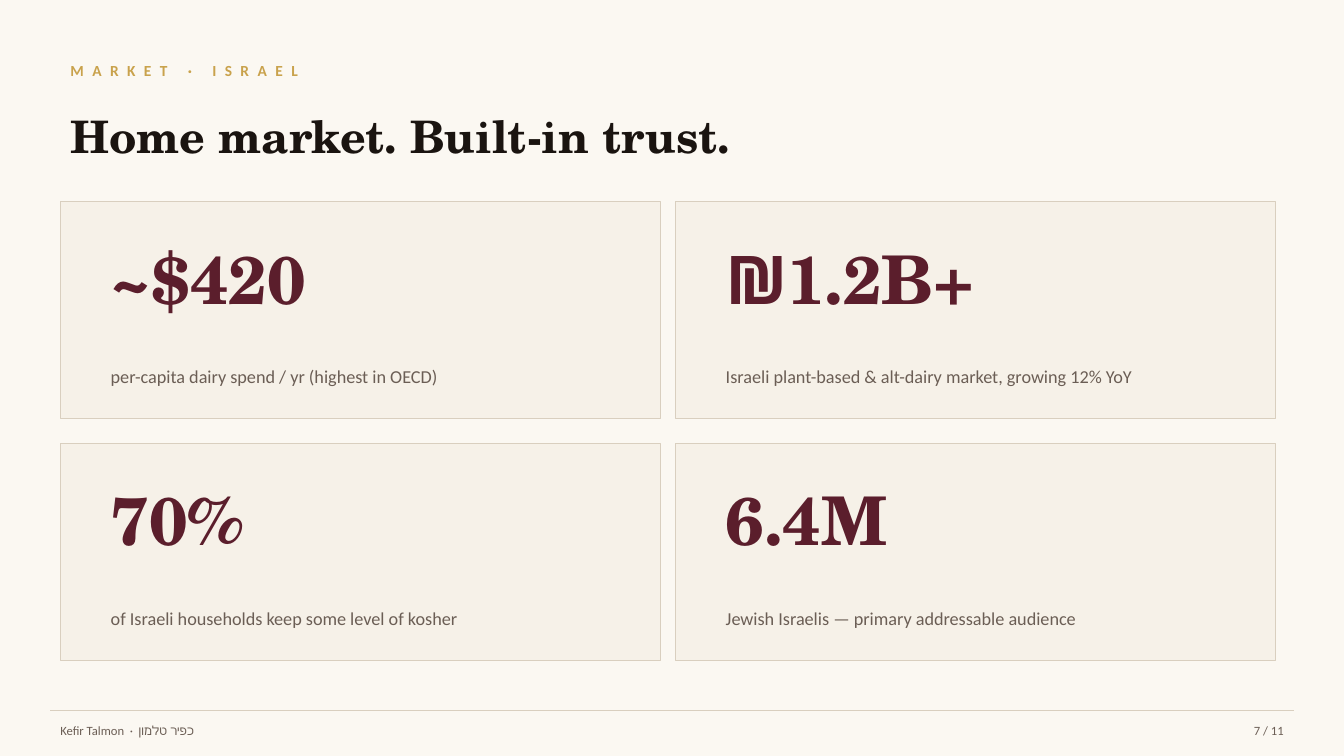
from pptx import Presentation
from pptx import util as u
from pptx.dml.color import RGBColor
from pptx.enum import shapes, text
from pptx.oxml.xmlchemy import OxmlElement

EYEBROW = "MARKET · ISRAEL"
HEADLINE = "Home market. Built-in trust."
STATS = [
    ("~$420", "per-capita dairy spend / yr (highest in OECD)"),
    ("₪1.2B+", "Israeli plant-based & alt-dairy market, growing 12% YoY"),
    ("70%", "of Israeli households keep some level of kosher"),
    ("6.4M", "Jewish Israelis — primary addressable audience"),
]
FOOTER = "Kefir Talmon  ·  כפיר טלמון"
PAGE_NUMBER = "7 / 11"

COLORS = {
    "background": "FBF8F2",
    "card": "F6F1E8",
    "rule": "D9CFBF",
    "gold": "C9A24C",
    "ink": "1A1410",
    "wine": "5B1E2C",
    "muted": "6B5E55",
}
SERIF, SANS = "TeX Gyre Schola", "Calibri"

WIDTH, HEIGHT = 13.33, 7.5
MARGIN, EDGE = 0.6, 0.5
COLUMNS = 2
GRID_TOP = 2
CARD_WIDTH, CARD_HEIGHT = 5.95, 2.15
COLUMN_GAP, ROW_GAP = 0.15, 0.25
CARD_INDENT, STAT_WIDTH = 0.4, 5.2
FOOTER_TOP, FOOTER_HEIGHT = 7.1, 0.3
PAGE_WIDTH = 0.7


def color(name):
    return RGBColor.from_string(COLORS[name])


def add_text(slide, words, left, top, width, height, size=9, font=SANS, fill="muted",
             bold=False, align=None, line_spacing=None, tracking=None):
    box = slide.shapes.add_textbox(*map(u.Inches, (left, top, width, height)))
    frame = box.text_frame
    frame.word_wrap = True
    frame.vertical_anchor = text.MSO_ANCHOR.MIDDLE
    paragraph = frame.paragraphs[0]
    paragraph.alignment = align
    paragraph.line_spacing = line_spacing
    run = paragraph.add_run()
    run.text = words
    run.font.size = u.Pt(size)
    run.font.name = font
    run.font.bold = bold
    run.font.color.rgb = color(fill)
    if tracking:
        run.font._element.set("spc", str(tracking * 100))


def add_card(slide, left, top, figure, caption):
    card = slide.shapes.add_shape(
        shapes.MSO_SHAPE.RECTANGLE,
        *map(u.Inches, (left, top, CARD_WIDTH, CARD_HEIGHT)))
    card.shadow.inherit = False
    card.fill.solid()
    card.fill.fore_color.rgb = color("card")
    card.line.color.rgb = color("rule")
    card.line.width = u.Pt(0.75)
    inner = left + CARD_INDENT
    add_text(slide, figure, inner, top + 0.25, STAT_WIDTH, 1,
             size=48, font=SERIF, fill="wine", bold=True)
    add_text(slide, caption, inner, top + 1.35, STAT_WIDTH, 0.7,
             size=13, line_spacing=1.3)


def add_footer(slide):
    right = WIDTH - EDGE
    add_text(slide, FOOTER, EDGE, FOOTER_TOP, 6, FOOTER_HEIGHT)
    add_text(slide, PAGE_NUMBER, right - PAGE_WIDTH, FOOTER_TOP, PAGE_WIDTH,
             FOOTER_HEIGHT, align=text.PP_ALIGN.RIGHT)
    rule_top = FOOTER_TOP - 0.05
    rule = slide.shapes.add_connector(
        shapes.MSO_CONNECTOR.STRAIGHT,
        *map(u.Inches, (EDGE, rule_top, right, rule_top)))
    rule.line.color.rgb = color("rule")
    rule.line.width = u.Pt(0.5)
    rule._element.spPr.append(OxmlElement("a:effectLst"))


def main():
    deck = Presentation()
    deck.slide_width, deck.slide_height = u.Inches(WIDTH), u.Inches(HEIGHT)
    slide = deck.slides.add_slide(deck.slide_layouts[6])
    slide.background.fill.solid()
    slide.background.fill.fore_color.rgb = color("background")

    add_text(slide, EYEBROW, MARGIN, 0.55, 8, 0.3,
             size=11, fill="gold", bold=True, tracking=6)
    add_text(slide, HEADLINE, MARGIN, 1, 12, 0.7,
             size=32, font=SERIF, fill="ink", bold=True)
    for index, (figure, caption) in enumerate(STATS):
        row, column = divmod(index, COLUMNS)
        add_card(slide, MARGIN + column * (CARD_WIDTH + COLUMN_GAP),
                 GRID_TOP + row * (CARD_HEIGHT + ROW_GAP), figure, caption)
    add_footer(slide)
    deck.save("out.pptx")


if __name__ == "__main__":
    main()
